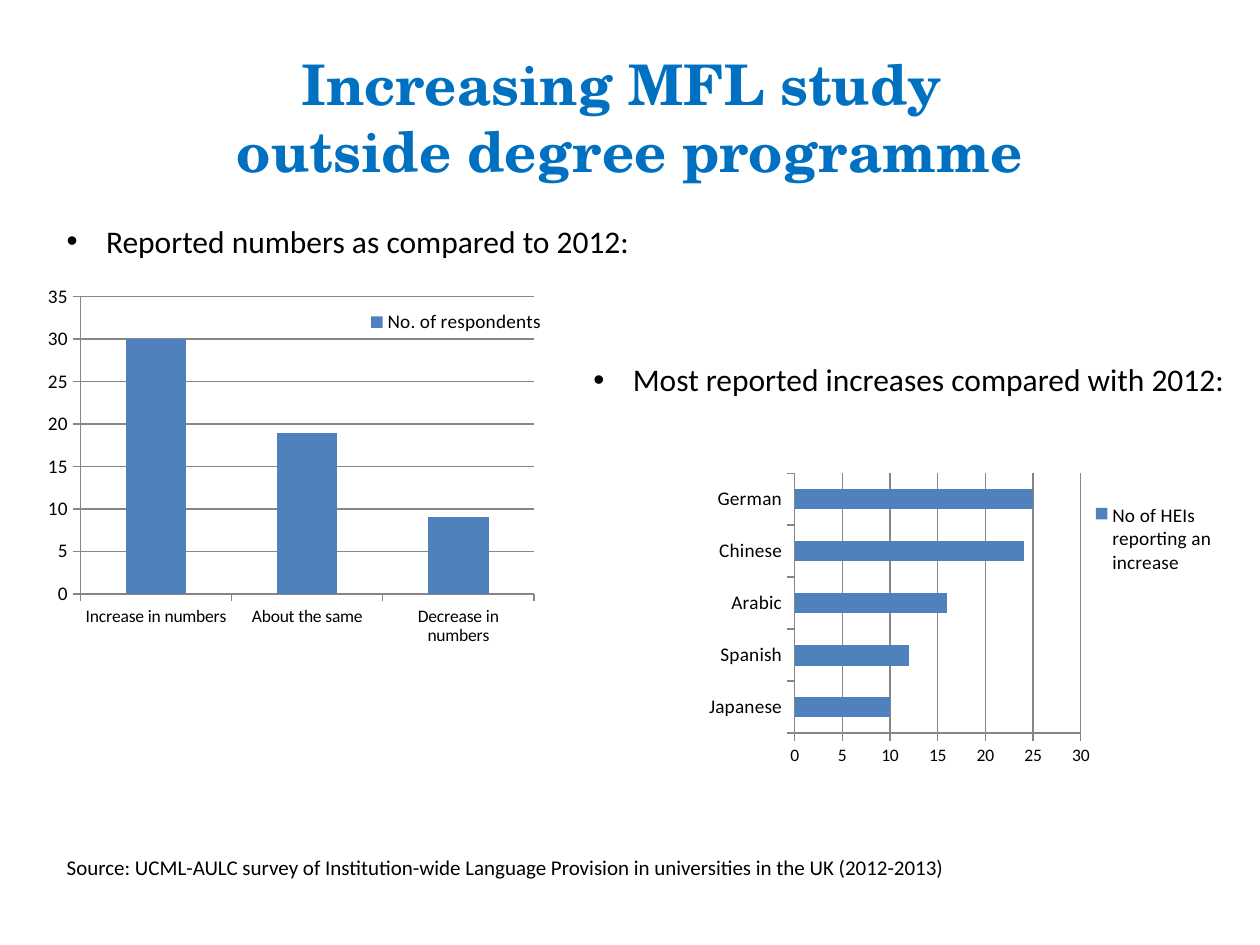
from lxml import etree
from pptx import Presentation
from pptx.chart.data import CategoryChartData
from pptx.dml.color import RGBColor
from pptx.enum.chart import XL_CHART_TYPE, XL_LEGEND_POSITION, XL_TICK_MARK
from pptx.enum.text import MSO_ANCHOR, PP_ALIGN
from pptx.oxml.ns import qn
from pptx.util import Pt

COLUMN, BAR = XL_CHART_TYPE.COLUMN_CLUSTERED, XL_CHART_TYPE.BAR_CLUSTERED
RIGHT, OUT = XL_LEGEND_POSITION.RIGHT, XL_TICK_MARK.OUTSIDE
TOP, MIDDLE = MSO_ANCHOR.TOP, MSO_ANCHOR.MIDDLE
LEFT, CENTER = PP_ALIGN.LEFT, PP_ALIGN.CENTER

THEME = {
    "blue": RGBColor(0x00, 0x70, 0xC0),
    "black": RGBColor(0x00, 0x00, 0x00),
    "bar": RGBColor(0x4F, 0x81, 0xBD),
    "grid": RGBColor(0x86, 0x86, 0x86),
    "serif": "TeX Gyre Schola",
    "sans": "Calibri",
    "title": Pt(32),
    "point": Pt(18),
    "note": Pt(12),
    "label": Pt(11),
    "small": Pt(10),
}


def style(item, values):
    for name, value in values.items():
        setattr(item, name, value)


def layout(box, inner=False):
    node = etree.Element(qn("c:layout"))
    manual = etree.SubElement(node, qn("c:manualLayout"))
    rules = [("layoutTarget", "inner")] if inner else []
    rules += [("xMode", "edge"), ("yMode", "edge")]
    rules += zip("xywh", box)
    for tag, value in rules:
        etree.SubElement(manual, qn(f"c:{tag}")).set("val", str(value))
    return node


deck = Presentation()
style(deck, {"slide_width": Pt(720), "slide_height": Pt(540)})
slide = deck.slides.add_slide(deck.slide_layouts[6])

plain = {"name": THEME["sans"], "bold": False}
head = {"name": THEME["serif"], "bold": True, "size": THEME["title"]}
point = plain | {"size": THEME["point"]}
note = plain | {"size": THEME["note"]}

texts = [
    ("Increasing MFL study \voutside degree programme",
     (36, 21.6, 648, 90), head, "blue", CENTER, MIDDLE, False),
    ("Most reported increases compared with 2012:",
     (332, 202.3, 384, 51), point, "black", LEFT, TOP, True),
    ("Reported numbers as compared to 2012:",
     (31, 123.3, 344, 51), point, "black", LEFT, TOP, True),
    ("Source: UCML-AULC survey of Institution-wide Language Provision "
     "in universities in the UK (2012-2013)",
     (31, 484.6, 567, 21.6), note, "black", LEFT, TOP, False),
]
for words, place, face, color, align, anchor, bullet in texts:
    frame = slide.shapes.add_textbox(*map(Pt, place)).text_frame
    style(frame, {"word_wrap": True, "vertical_anchor": anchor})
    para = frame.paragraphs[0]
    style(para, {"text": words, "alignment": align})
    for run in para.runs:
        style(run.font, face)
        run.font.color.rgb = THEME[color]
    if bullet:
        props = para._p.get_or_add_pPr()
        props.set("marL", str(Pt(22.5)))
        props.set("indent", str(Pt(-22.5)))
        etree.SubElement(props, qn("a:buFont")).set("typeface", "Arial")
        etree.SubElement(props, qn("a:buChar")).set("char", "•")

charts = [
    {"kind": COLUMN, "place": (20, 162, 332, 221), "name": "No. of respondents",
     "data": {"Increase in numbers": 30, "About the same": 19,
              "Decrease in numbers": 9},
     "top": 35, "sizes": ("small", "label"), "over": True,
     "plot": (0.078, 0.034, 0.781, 0.769), "key": (0.56, 0.06, 0.33, 0.08)},
    {"kind": BAR, "place": (326, 270, 374.4, 185),
     "name": "No of HEIs reporting an increase",
     "data": {"Japanese": 10, "Spanish": 12, "Arabic": 16,
              "Chinese": 24, "German": 25},
     "top": 30, "sizes": ("label", "small"), "over": False,
     "plot": (0.342, 0, 0.437, 0.805), "key": (0.78, 0.08, 0.22, 0.25)},
]
for item in charts:
    data = CategoryChartData(number_format="0")
    data.categories = list(item["data"])
    data.add_series(item["name"], list(item["data"].values()))
    chart = slide.shapes.add_chart(
        item["kind"], *map(Pt, item["place"]), data).chart
    style(chart, {"has_title": False, "has_legend": True})
    style(chart.font, plain | {"size": THEME["small"]})
    chart.font.color.rgb = THEME["black"]

    plot = chart.plots[0]
    style(plot, {"gap_width": 150, "vary_by_categories": False})
    fill = plot.series[0].format.fill
    fill.solid()
    fill.fore_color.rgb = THEME["bar"]

    cats, vals = chart.category_axis, chart.value_axis
    style(vals, {"minimum_scale": 0, "maximum_scale": item["top"],
                 "major_unit": 5, "has_major_gridlines": True})
    for axis, size in zip((cats, vals), item["sizes"]):
        style(axis, {"major_tick_mark": OUT})
        style(axis.tick_labels.font, plain | {"size": THEME[size]})
    for part in (cats, vals, vals.major_gridlines):
        part.format.line.width = Pt(0.75)
        part.format.line.color.rgb = THEME["grid"]

    key = chart.legend
    style(key, {"position": RIGHT, "include_in_layout": item["over"]})
    style(key.font, plain | {"size": THEME["label"]})
    key._element.find(qn("c:overlay")).addprevious(layout(item["key"]))
    area = chart._chartSpace.chart.plotArea
    for old in area.findall(qn("c:layout")):
        area.remove(old)
    area.insert(0, layout(item["plot"], inner=True))

deck.save("out.pptx")
